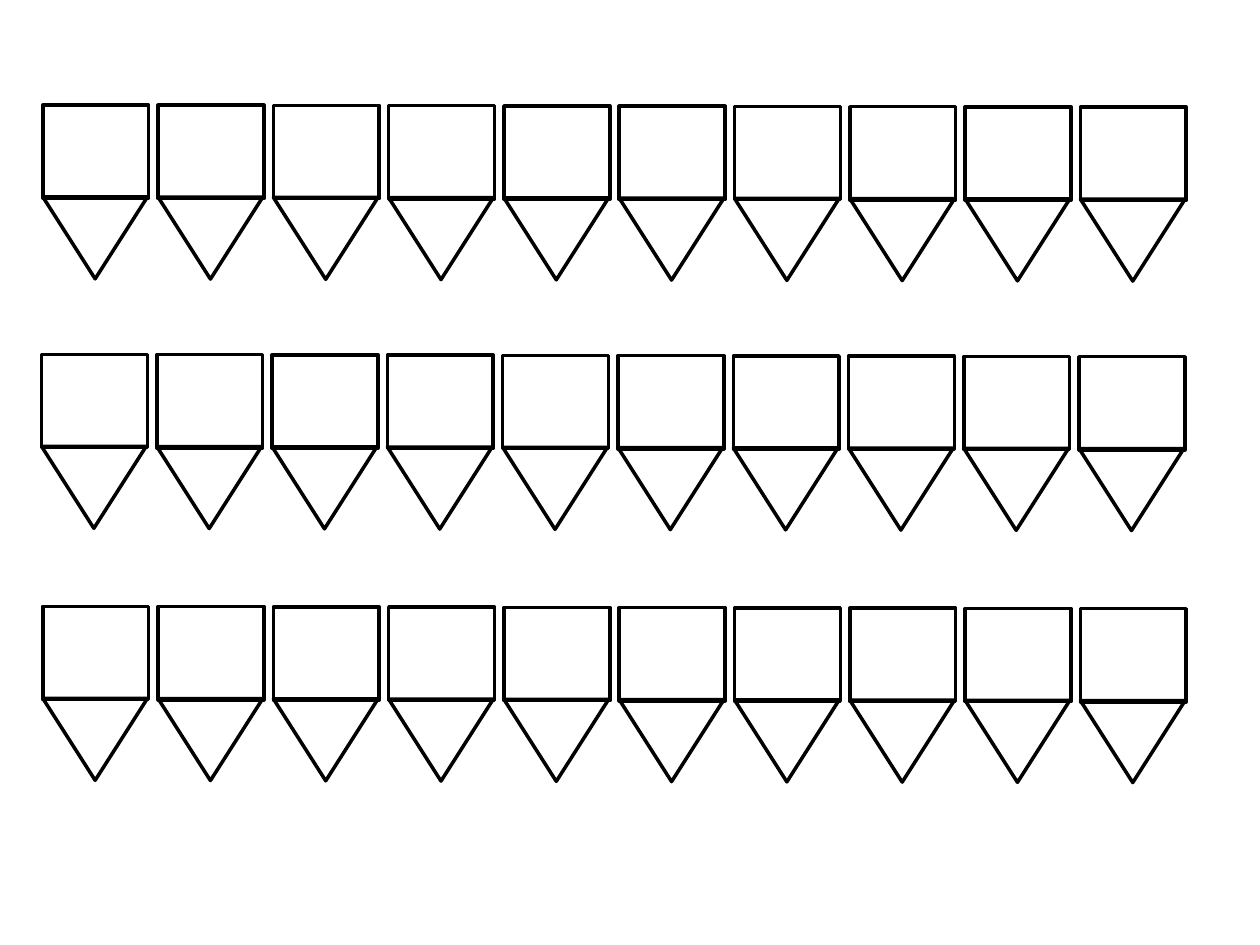
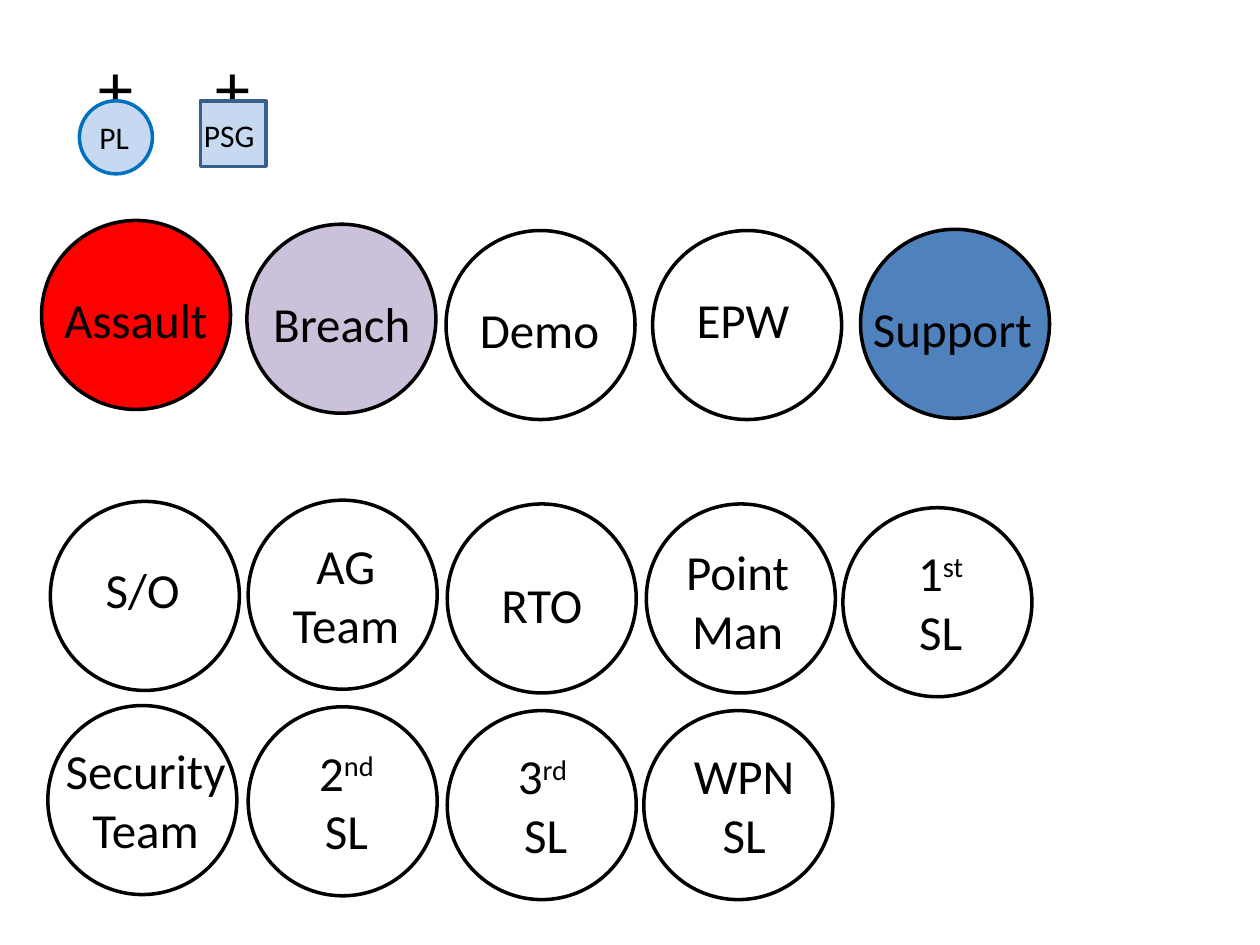
"""Build a sheet of blank markers and a sheet of team badges."""
from dataclasses import dataclass

from pptx import Presentation
from pptx.dml.color import RGBColor
from pptx.enum.shapes import MSO_SHAPE
from pptx.enum.text import MSO_AUTO_SIZE, PP_ALIGN
from pptx.util import Inches, Pt

COLUMNS, ROWS = 100, 75


@dataclass(frozen=True)
class Theme:
    font: str = "Calibri"
    ink: str = "000000"
    red: str = "FF0000"
    lilac: str = "CCC1DA"
    blue: str = "4F81BD"
    pale: str = "C6D9F1"
    bright: str = "0070C0"
    steel: str = "3A5F8C"
    line: float = 2
    badge_size: int = 28
    leader_size: int = 18
    plus_size: int = 40


def write_text(box, text, *, font, size, color):
    box.text_frame.clear()
    lines = text.split("\n")
    for index, line in enumerate(lines):
        frame = box.text_frame
        para = frame.add_paragraph() if index else frame.paragraphs[0]
        para.alignment = PP_ALIGN.CENTER if len(lines) > 1 else PP_ALIGN.LEFT
        for raised, part in enumerate(line.split("^")):
            span = para.add_run()
            span.text = part
            span.font.name, span.font.size = font, Pt(size)
            span.font.color.rgb = RGBColor.from_string(color)
            if raised:
                span.font._element.set("baseline", "30000")


class Sheet:
    def __init__(self, deck, theme):
        self.deck, self.theme = deck, theme
        self.page = self.group = None

    def new_page(self):
        self.page = self.deck.slides.add_slide(self.deck.slide_layouts[6])

    def new_group(self):
        self.group = self.page.shapes.add_group_shape()

    def place(self, left, top, width, height):
        across = self.deck.slide_width / COLUMNS
        down = self.deck.slide_height / ROWS
        return (round(left * across), round(top * down),
                round(width * across), round(height * down))

    def paint(self, shape, fill):
        if fill:
            shape.fill.solid()
            shape.fill.fore_color.rgb = RGBColor.from_string(fill)
        else:
            shape.fill.background()

    def outline(self, kind, area, fill=None, line=None, rotation=0):
        shape = self.group.shapes.add_shape(kind, *self.place(*area))
        shape.shadow.inherit = False
        shape.rotation = rotation
        self.paint(shape, fill)
        shape.line.color.rgb = RGBColor.from_string(line or self.theme.ink)
        shape.line.width = Pt(self.theme.line)

    def label(self, text, area, size, fill=None):
        box = self.group.shapes.add_textbox(*self.place(*area))
        self.paint(box, fill)
        box.text_frame.word_wrap = False
        box.text_frame.auto_size = MSO_AUTO_SIZE.SHAPE_TO_FIT_TEXT
        write_text(box, text, font=self.theme.font, size=size, color=self.theme.ink)

    def marker(self, left, top):
        self.new_group()
        self.outline(MSO_SHAPE.ISOSCELES_TRIANGLE, (left, top + 7.3, 8.3, 6.5), rotation=180)
        self.outline(MSO_SHAPE.RECTANGLE, (left, top, 8.4, 7.4))

    def badge(self, text, corner, label_corner, label_width, fill=None, label_fill=None):
        self.new_group()
        self.outline(MSO_SHAPE.OVAL, (*corner, 15, 15), fill)
        height = 10.4 if "\n" in text else 5.7
        self.label(text, (*label_corner, label_width, height),
                   self.theme.badge_size, label_fill)

    def leader(self, text, kind, corner, side, line, label_area, plus_left):
        self.new_group()
        self.label("+", (plus_left, 3, 4.8, 7.7), self.theme.plus_size)
        self.outline(kind, (*corner, side, side), self.theme.pale, line)
        self.label(text, label_area, self.theme.leader_size)


def draw_markers(sheet):
    sheet.new_page()
    for left, top in ((3.4, 8.33), (3.3, 28.13), (3.4, 48.13)):
        for column in range(10):
            sheet.marker(left + 9.15 * column, top + 0.02 * column)


def draw_badges(sheet):
    theme = sheet.theme
    sheet.new_page()
    badges = (
        ("S/O", (4, 39.8), (7.4, 43.9), 7.9),
        ("AG\nTeam", (19.7, 39.7), (22.2, 42), 10.5),
        ("RTO", (35.5, 40), (38.8, 45.1), 8.5),
        ("Point\nMan", (51.3, 40), (53.4, 42.5), 10.3),
        ("1^st\nSL", (66.9, 40.3), (71.7, 42.6), 5.9),
        ("WPN\nSL", (51.1, 56.4), (54, 58.7), 10.1),
        ("3^rd \nSL", (35.5, 56.4), (39.7, 58.7), 7.2),
        ("2^nd\nSL", (19.7, 56.1), (24.1, 58.4), 6.8),
        ("Security\nTeam", (3.8, 56), (4.1, 58.3), 14.9),
        ("Support", (68.3, 18.2), (68.3, 23.2), 14.6, theme.blue),
        ("Breach", (19.6, 17.8), (20.7, 22.8), 13, theme.lilac, theme.lilac),
        ("Assault", (3.3, 17.5), (4.1, 22.5), 13.5, theme.red),
        ("Demo", (35.4, 18.3), (37.1, 23.3), 11.6),
        ("EPW", (51.8, 18.3), (54.3, 22.5), 9.5),
    )
    for badge in badges:
        sheet.badge(*badge)
    sheet.leader("PL", MSO_SHAPE.OVAL, (6.3, 8), 5.8, theme.bright, (6.9, 8.9, 4.4, 4), 6.8)
    sheet.leader("PSG", MSO_SHAPE.RECTANGLE, (15.9, 8), 5.2, theme.steel,
                 (15.2, 8.7, 6.1, 4), 16.1)


def main():
    deck = Presentation()
    deck.slide_width, deck.slide_height = Inches(10), Inches(7.5)
    sheet = Sheet(deck, Theme())
    draw_markers(sheet)
    draw_badges(sheet)
    deck.save("out.pptx")


if __name__ == "__main__":
    main()
